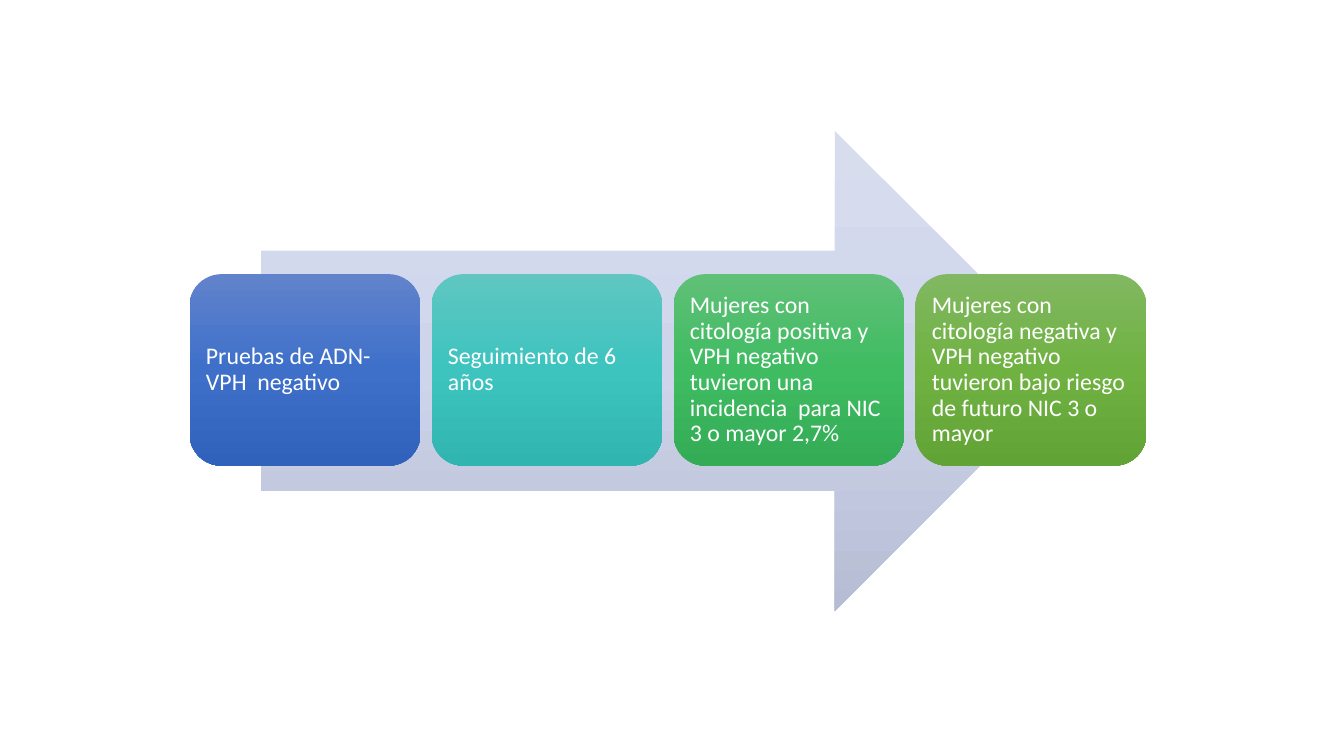
import copy

import pptx
import pptx.dml.color
import pptx.enum.shapes
import pptx.enum.text
import pptx.util

Inches = pptx.util.Inches
Shape = pptx.enum.shapes.MSO_SHAPE

THEME = {
    "font": "Calibri",
    "size": 17,
    "text": "FFFFFF",
    "arrow": ("D8DDEE", "CED5EB", "B5BCD3"),
    "blue": ("6183CB", "3E70CA", "3062BB"),
    "teal": ("60C6C1", "3DC4BF", "30B5B0"),
    "green": ("60C077", "3FBC62", "33AC55"),
    "lime": ("81B861", "6FB242", "62A336"),
}

STEPS = [
    ("blue", "Pruebas de ADN-VPH  negativo"),
    ("teal", "Seguimiento de 6 años"),
    ("green", "Mujeres con citología positiva y VPH negativo tuvieron una "
              "incidencia  para NIC 3 o mayor 2,7%"),
    ("lime", "Mujeres con citología negativa y VPH negativo tuvieron bajo "
             "riesgo de futuro NIC 3 o mayor"),
]
STEP_LEFT, STEP_TOP, STEP_WIDTH, STEP_HEIGHT = 1.88, 2.72, 2.29, 1.9
STEP_PITCH = 2.4


def add_gradient_shape(kind, left, top, width, height, colors):
    """Add a borderless shape shaded from top to bottom through three colours."""
    shape = slide.shapes.add_shape(
        kind, Inches(left), Inches(top), Inches(width), Inches(height))
    shape.shadow.inherit = False
    shape.line.fill.background()
    shape.fill.gradient()
    shape.fill.gradient_angle = 270
    stop_list = shape.element.xpath(".//a:gsLst")[0]
    stop_list.insert(1, copy.deepcopy(stop_list[0]))
    for stop, position, color in zip(shape.fill.gradient_stops, (0, 0.5, 1), colors):
        stop.position = position
        stop.color.rgb = pptx.dml.color.RGBColor.from_string(color)
    return shape


deck = pptx.Presentation()
deck.slide_width, deck.slide_height = Inches(13.33), Inches(7.5)
slide = deck.slides.add_slide(deck.slide_layouts[6])

arrow = add_gradient_shape(
    Shape.RIGHT_ARROW, 2.59, 1.3, 8.07, 4.76, THEME["arrow"])

for index, (color_name, wording) in enumerate(STEPS):
    step = add_gradient_shape(
        Shape.ROUNDED_RECTANGLE, STEP_LEFT + index * STEP_PITCH, STEP_TOP,
        STEP_WIDTH, STEP_HEIGHT, THEME[color_name])
    frame = step.text_frame
    frame.word_wrap = True
    frame.vertical_anchor = pptx.enum.text.MSO_ANCHOR.MIDDLE
    frame.margin_left = frame.margin_right = Inches(0.07)
    frame.margin_top = frame.margin_bottom = Inches(0.07)
    paragraph = frame.paragraphs[0]
    paragraph.alignment = pptx.enum.text.PP_ALIGN.LEFT
    paragraph.line_spacing = 0.9
    run = paragraph.add_run()
    run.text = wording
    run.font.name = THEME["font"]
    run.font.size = pptx.util.Pt(THEME["size"])
    run.font.color.rgb = pptx.dml.color.RGBColor.from_string(THEME["text"])

deck.save("out.pptx")
